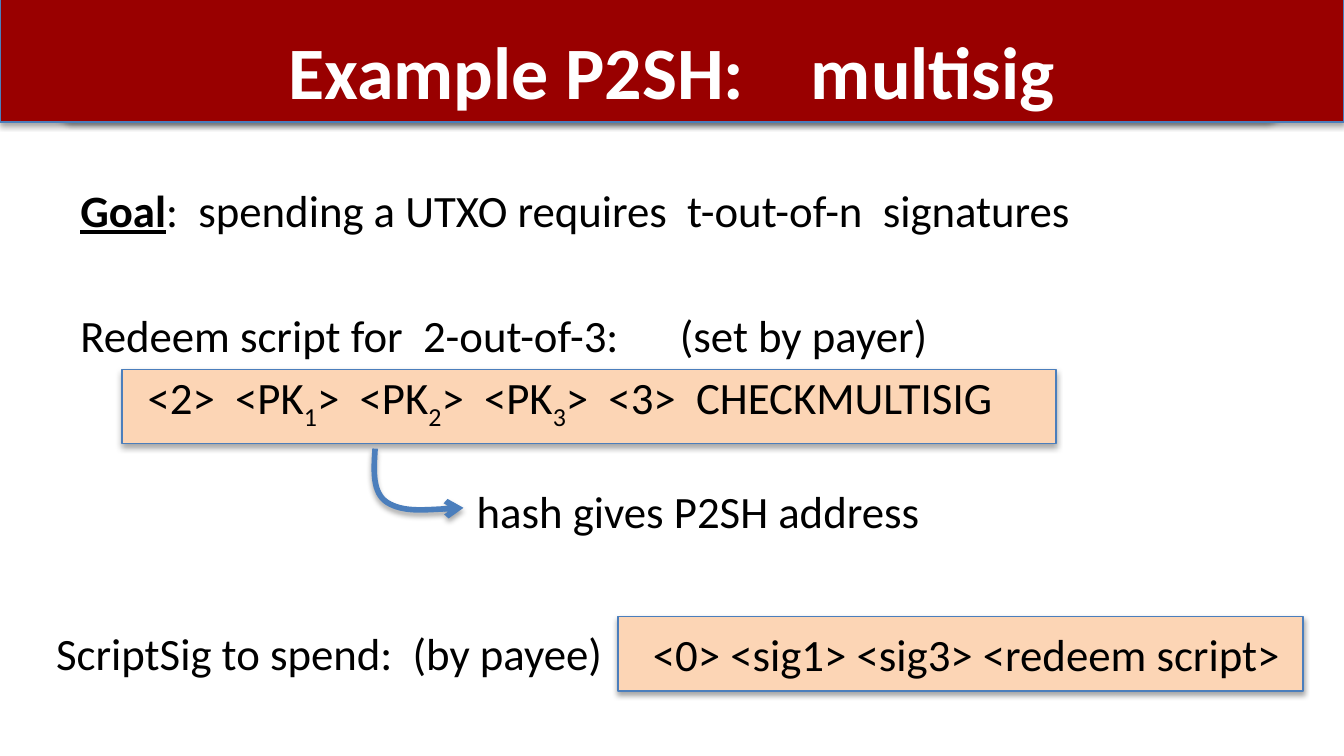
import pptx
import pptx.dml.color
import pptx.enum.shapes
import pptx.enum.text
import pptx.oxml.ns
import pptx.util
from lxml import etree
from pptx.util import Cm, Pt

RED = pptx.dml.color.RGBColor(0x99, 0x00, 0x00)
PEACH = pptx.dml.color.RGBColor(0xFC, 0xD5, 0xB5)
BLUE = pptx.dml.color.RGBColor(0x4B, 0x7E, 0xBC)
PURPLE = pptx.dml.color.RGBColor(0x7D, 0x60, 0xA0)
BLACK = pptx.dml.color.RGBColor(0x00, 0x00, 0x00)
WHITE = pptx.dml.color.RGBColor(0xFF, 0xFF, 0xFF)
FONT = "Calibri"
BODY_SIZE = 24
SHAPE = pptx.enum.shapes.MSO_SHAPE
ANCHOR = pptx.enum.text.MSO_ANCHOR
qn = pptx.oxml.ns.qn


def add_xml(parent, tag, **attributes):
    return etree.SubElement(parent, qn(tag), attributes)


def add_soft_shadow(shape):
    shape.shadow.inherit = False
    effects = shape.element.spPr.find(qn("a:effectLst"))
    shadow = add_xml(effects, "a:outerShdw", blurRad=str(Pt(3.1)), dist=str(Pt(1.8)),
                     dir="5400000", rotWithShape="0")
    color = add_xml(shadow, "a:srgbClr", val="000000")
    add_xml(color, "a:alpha", val="35000")


def add_panel(slide, left, top, width, height, fill, line=BLUE, kind=SHAPE.RECTANGLE):
    panel = slide.shapes.add_shape(kind, Cm(left), Cm(top), Cm(width), Cm(height))
    panel.fill.solid()
    panel.fill.fore_color.rgb = fill
    panel.line.color.rgb = line
    panel.line.width = Pt(0.75)
    add_soft_shadow(panel)
    return panel


def format_paragraph(paragraph, size=BODY_SIZE, color=BLACK):
    paragraph.font.name = FONT
    paragraph.font.size = Pt(size)
    paragraph.font.color.rgb = color


def add_script_box(slide, left, top, width, inset, pieces, lift=0):
    """Draw a script line; odd pieces are subscripts, lift raises the text."""
    box = add_panel(slide, left, top, width, 1.4, PEACH)
    frame = box.text_frame
    frame.word_wrap = False
    frame.vertical_anchor = ANCHOR.MIDDLE
    frame.margin_left, frame.margin_right = Cm(inset), 0
    frame.margin_top, frame.margin_bottom = 0, Cm(lift)
    line = frame.paragraphs[0]
    line.alignment = pptx.enum.text.PP_ALIGN.LEFT
    format_paragraph(line)
    for index, piece in enumerate(pieces):
        run = line.add_run()
        run.text = piece
        if index % 2:
            run.font._element.set("baseline", "-25000")


def add_label(slide, left, top, width, text, height=1.27):
    frame = slide.shapes.add_textbox(Cm(left), Cm(top), Cm(width), Cm(height)).text_frame
    frame.word_wrap = True
    frame.text = text
    for paragraph in frame.paragraphs:
        format_paragraph(paragraph)
    return frame


def add_statements(slide):
    frame = add_label(slide, 1.27, 3.33, 22.86, "", height=3.4)
    goal = frame.paragraphs[0]
    heading = goal.add_run()
    heading.text = "Goal"
    heading.font.bold = heading.font.underline = True
    goal.add_run().text = ":  spending a UTXO requires  t-out-of-n  signatures"

    redeem = frame.add_paragraph()
    redeem.text = "Redeem script for  2-out-of-3:\t(set by payer)"
    redeem.space_before = Pt(38)
    format_paragraph(redeem)
    stops = etree.Element(qn("a:tabLst"))
    add_xml(stops, "a:tab", pos=str(Cm(11.33)), algn="l")
    redeem._p.pPr.find(qn("a:defRPr")).addprevious(stops)


def add_curved_arrow(slide, points):
    """Draw a chain of cubic curves: a start, then three points per curve."""
    start, *rest = [(Cm(x), Cm(y)) for x, y in points]
    builder = slide.shapes.build_freeform(*start)
    builder.add_line_segments(rest, close=False)
    arrow = builder.convert_to_shape()
    segments = arrow.element.xpath(".//a:lnTo")
    for first in range(0, len(segments), 3):
        curve = etree.Element(qn("a:cubicBezTo"))
        segments[first].addprevious(curve)
        for segment in segments[first:first + 3]:
            curve.append(segment[0])
            segment.getparent().remove(segment)
    arrow.fill.background()
    arrow.line.color.rgb = BLUE
    arrow.line.width = Pt(3)
    add_xml(arrow.element.spPr.find(qn("a:ln")), "a:tailEnd", type="arrow")
    add_soft_shadow(arrow)


def add_title(slide, text):
    add_panel(slide, 1.02, 0, 23.19, 2.26, RED, PURPLE, SHAPE.ROUNDED_RECTANGLE)
    add_panel(slide, 0, -0.03, 25.4, 2.34, RED)
    title = slide.shapes.title
    title.left, title.top, title.width, title.height = Cm(1.27), Cm(0.36), Cm(22.86), Cm(1.73)
    frame = title.text_frame
    frame.text = text
    frame.auto_size = pptx.enum.text.MSO_AUTO_SIZE.NONE
    frame.word_wrap = False
    frame.vertical_anchor = ANCHOR.TOP
    heading = frame.paragraphs[0]
    heading.alignment = pptx.enum.text.PP_ALIGN.CENTER
    format_paragraph(heading, 39.6, WHITE)
    heading.font.bold = True
    slide.shapes._spTree.append(title.element)  # bring in front of the banner


def main():
    deck = pptx.Presentation()
    deck.slide_width, deck.slide_height = Cm(25.4), Cm(14.29)
    slide = deck.slides.add_slide(deck.slide_layouts.get_by_name("Title Only"))

    add_title(slide, "Example P2SH:    multisig")
    add_statements(slide)
    add_script_box(slide, 2.31, 6.99, 17.65, 0.48,
                   ["<2>  <PK", "1", ">  <PK", "2", ">  <PK", "3", ">  <3>  CHECKMULTISIG"],
                   lift=0.23)
    add_curved_arrow(slide, [(7.09, 8.48), (7.06, 8.92), (7.04, 9.32), (7.32, 9.5),
                             (7.62, 9.68), (8.2, 9.63), (8.76, 9.6)])
    add_label(slide, 8.76, 9.02, 8.97, "hash gives P2SH address")
    add_label(slide, 0.81, 11.71, 10.87, "ScriptSig to spend:  (by payee)")
    add_script_box(slide, 11.68, 11.66, 12.95, 0.66, ["<0> <sig1> <sig3> <redeem script>"])

    deck.save("out.pptx")


if __name__ == "__main__":
    main()
